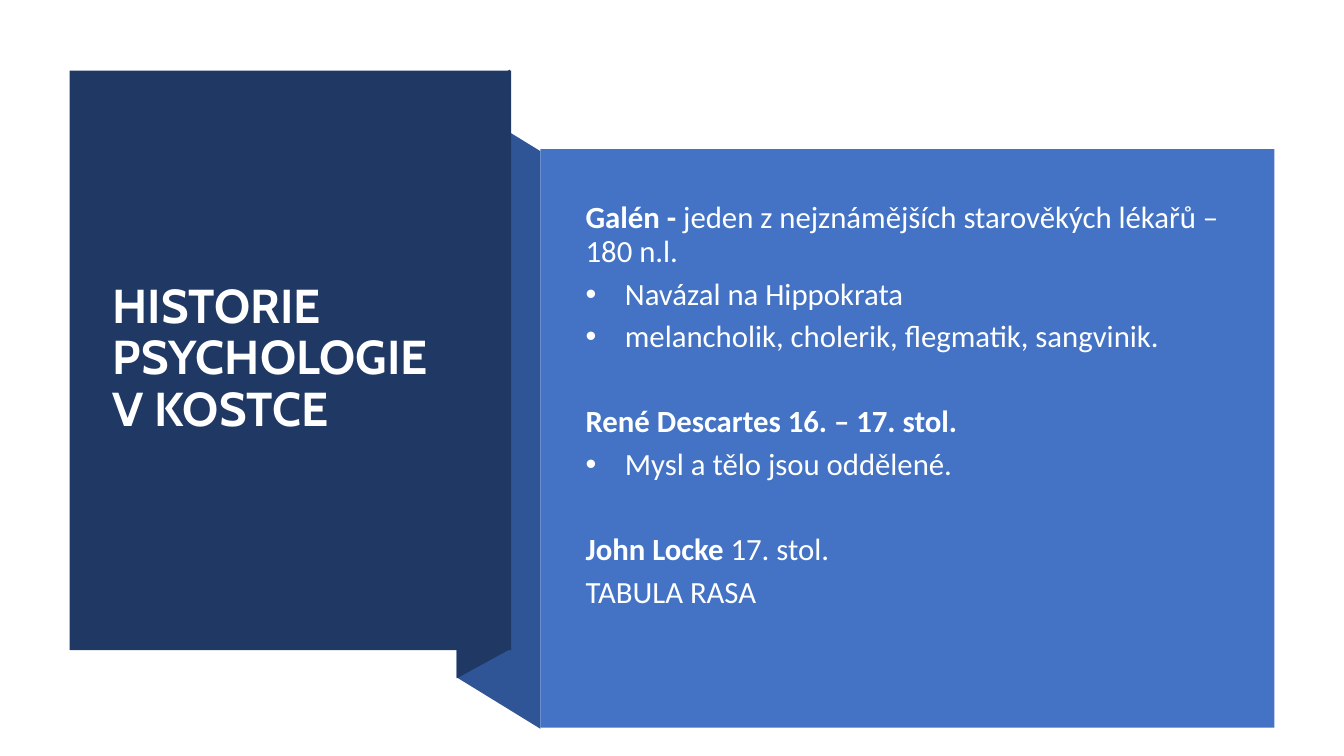
from dataclasses import dataclass

from lxml.etree import SubElement
from pptx import Presentation
from pptx.dml.color import RGBColor
from pptx.enum.shapes import MSO_SHAPE
from pptx.enum.text import MSO_ANCHOR
from pptx.oxml.ns import qn
from pptx.shapes.autoshape import Shape
from pptx.slide import Slide
from pptx.text.text import TextFrame, _Paragraph
from pptx.util import Inches, Pt

COLORS = {
    "navy": "203864",
    "fold": "2F5597",
    "panel": "4472C4",
    "title": "FFFFFF",
    "body": "FEFFFF",
}
GROUP_GAP = 30.7
BULLET_INDENT = 0.39


@dataclass(frozen=True)
class RibbonPart:
    color: str
    corners: tuple[tuple[float, float], ...]


@dataclass(frozen=True)
class Entry:
    plain: str = ""
    bold: str = ""
    bullet: bool = False
    gap_before: float = 0


RIBBON = (
    RibbonPart("fold", ((5.36, 7.23), (4.53, 6.72), (4.53, 0.99), (5.36, 1.5))),
    RibbonPart("navy", ((5.06, 6.44), (4.53, 6.73), (4.53, 0.98), (5.06, 0.69))),
)

ENTRIES = (
    Entry(bold="Galén -", plain=" jeden z nejznámějších starověkých lékařů – 180 n.l."),
    Entry("Navázal na Hippokrata", bullet=True),
    Entry("melancholik, cholerik, flegmatik, sangvinik.", bullet=True),
    Entry(bold="René Descartes 16. – 17. stol.", gap_before=GROUP_GAP),
    Entry("Mysl a tělo jsou oddělené.", bullet=True),
    Entry(bold="John Locke ", plain="17. stol.", gap_before=GROUP_GAP),
    Entry("TABULA RASA"),
)


def rgb(name: str) -> RGBColor:
    return RGBColor.from_string(COLORS[name])


def paint(shape: Shape, color: str) -> None:
    """Give a shape a flat fill without line or shadow."""
    shape.shadow.inherit = False
    shape.fill.solid()
    shape.fill.fore_color.rgb = rgb(color)
    shape.line.fill.background()


def add_ribbon_part(slide: Slide, part: RibbonPart) -> None:
    start, *others = [(Inches(x), Inches(y)) for x, y in part.corners]
    outline = slide.shapes.build_freeform(*start)
    outline.add_line_segments(others, close=True)
    paint(outline.convert_to_shape(), part.color)


def add_block(slide: Slide, left: float, top: float, width: float, height: float,
              color: str) -> None:
    block = slide.shapes.add_shape(
        MSO_SHAPE.RECTANGLE, Inches(left), Inches(top), Inches(width), Inches(height))
    paint(block, color)


def add_text_frame(slide: Slide, left: float, top: float, width: float, height: float,
                   anchor: MSO_ANCHOR) -> TextFrame:
    frame = slide.shapes.add_textbox(
        Inches(left), Inches(top), Inches(width), Inches(height)).text_frame
    frame.word_wrap = True
    frame.vertical_anchor = anchor
    return frame


def add_bullet(paragraph: _Paragraph) -> None:
    properties = paragraph._p.get_or_add_pPr()
    properties.set("marL", str(Inches(BULLET_INDENT)))
    properties.set("indent", str(-Inches(BULLET_INDENT)))
    SubElement(properties, qn("a:buFont"), typeface="Arial")
    SubElement(properties, qn("a:buChar"), char="•")


def set_font(paragraph: _Paragraph, name: str, size: float, color: str) -> None:
    paragraph.font.name = name
    paragraph.font.size = Pt(size)
    paragraph.font.color.rgb = rgb(color)


def write_entry(paragraph: _Paragraph, entry: Entry) -> None:
    paragraph.line_spacing = 0.92
    paragraph.space_before = Pt(entry.gap_before)
    paragraph.space_after = Pt(6)
    if entry.bullet:
        add_bullet(paragraph)
    set_font(paragraph, "Calibri", 22, "body")
    for text, bold in ((entry.bold, True), (entry.plain, False)):
        if text:
            run = paragraph.add_run()
            run.text = text
            run.font.bold = bold


def main() -> None:
    presentation = Presentation()
    presentation.slide_width = Inches(13.33)
    presentation.slide_height = Inches(7.5)
    slide = presentation.slides.add_slide(presentation.slide_layouts[6])

    for part in RIBBON:
        add_ribbon_part(slide, part)
    add_block(slide, 0.69, 0.7, 4.38, 5.75, "navy")

    title = add_text_frame(slide, 1.02, 1.07, 3.71, 4.99, MSO_ANCHOR.MIDDLE).paragraphs[0]
    title.text = "HISTORIE PSYCHOLOGIE V KOSTCE"
    title.line_spacing = 0.9
    set_font(title, "Cabin", 34, "title")
    title.font.bold = True

    add_block(slide, 5.36, 1.48, 7.28, 5.74, "panel")
    history = add_text_frame(slide, 5.71, 1.95, 6.51, 4.3, MSO_ANCHOR.TOP)
    history.margin_right = 0
    for index, entry in enumerate(ENTRIES):
        paragraph = history.add_paragraph() if index else history.paragraphs[0]
        write_entry(paragraph, entry)

    presentation.save("out.pptx")


if __name__ == "__main__":
    main()
